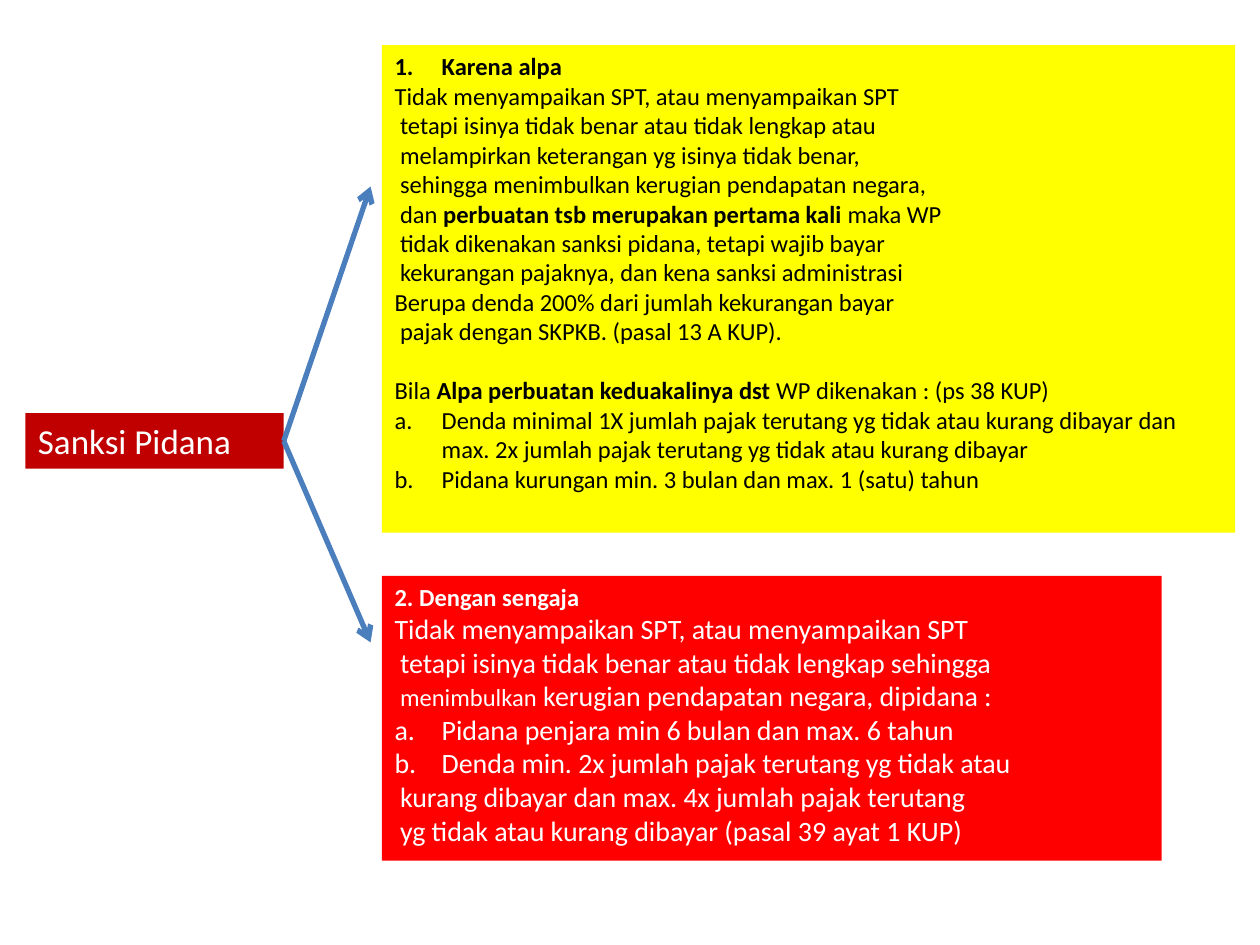
import pptx
import pptx.util
import pptx.dml.color
import pptx.enum.shapes
import pptx.enum.text
import pptx.oxml
import pptx.oxml.ns
from dataclasses import dataclass
from typing import NamedTuple, Optional

Cm, Pt = pptx.util.Cm, pptx.util.Pt
RGB = pptx.dml.color.RGBColor


@dataclass(frozen=True)
class Theme:
    font: str = "Calibri"
    maroon: str = "C00000"
    yellow: str = "FFFF00"
    red: str = "FF0000"
    arrow: str = "4B7EBC"
    black: str = "000000"
    white: str = "FFFFFF"
    title_size: int = 20
    large: int = 16
    small: int = 14


THEME = Theme()


class Run(NamedTuple):
    text: str
    bold: bool = False
    size: Optional[int] = None


class Line(NamedTuple):
    runs: tuple
    numbering: Optional[str] = None
    margin: float = 0
    before: float = 0


class Panel(NamedTuple):
    box: tuple
    fill: str
    color: str
    size: int
    lines: list


NUMBER_INDENT = 0.95
CONTINUATION_INDENT = 0.11


def plain(text: str, **options) -> Line:
    return Line((Run(text),), **options)


def continued(*runs: Run) -> Line:
    return Line(runs, margin=CONTINUATION_INDENT)


def item(text: str, numbering: str = "alphaLcPeriod", bold: bool = False) -> Line:
    return Line((Run(text, bold),), numbering, NUMBER_INDENT)


def format_paragraph(paragraph, line: Line) -> None:
    properties = paragraph._p.get_or_add_pPr()
    properties.set("marL", str(Cm(line.margin)))
    properties.set("indent", str(-Cm(line.margin) if line.numbering else 0))
    bullet = pptx.oxml.parse_xml(
        f'<a:{"buAutoNum" if line.numbering else "buNone"} {pptx.oxml.ns.nsdecls("a")}/>')
    if line.numbering:
        bullet.set("type", line.numbering)
    properties.append(bullet)
    layout = {"alignment": pptx.enum.text.PP_ALIGN.LEFT,
              "space_before": Pt(line.before), "space_after": Pt(0)}
    for name, value in layout.items():
        setattr(paragraph, name, value)


def fill_panel(placeholder, panel: Panel) -> None:
    for name, value in zip(("left", "top", "width", "height"), panel.box):
        setattr(placeholder, name, Cm(value))
    placeholder.fill.solid()
    placeholder.fill.fore_color.rgb = RGB.from_string(panel.fill)

    frame = placeholder.text_frame
    frame_format = {"word_wrap": True,
                    "auto_size": pptx.enum.text.MSO_AUTO_SIZE.NONE,
                    "vertical_anchor": pptx.enum.text.MSO_ANCHOR.TOP}
    for name, value in frame_format.items():
        setattr(frame, name, value)

    for index, line in enumerate(panel.lines):
        paragraph = frame.add_paragraph() if index else frame.paragraphs[0]
        format_paragraph(paragraph, line)
        for part in line.runs:
            run = paragraph.add_run()
            run.text = part.text
            run_format = {"name": THEME.font, "bold": part.bold,
                          "size": Pt(part.size or panel.size)}
            for name, value in run_format.items():
                setattr(run.font, name, value)
            run.font.color.rgb = RGB.from_string(panel.color)


def draw_arrow(slide, origin, end_x: float, end_y: float) -> None:
    arrow = slide.shapes.add_connector(
        pptx.enum.shapes.MSO_CONNECTOR.STRAIGHT, 0, 0, Cm(end_x), Cm(end_y))
    arrow.begin_connect(origin, 3)
    arrow.line.width = Pt(3)
    arrow.line.color.rgb = RGB.from_string(THEME.arrow)
    namespace = pptx.oxml.ns.nsdecls("a")
    arrow.line._get_or_add_ln().append(
        pptx.oxml.parse_xml(f'<a:tailEnd {namespace} type="arrow"/>'))
    arrow._element.spPr.append(pptx.oxml.parse_xml(f"<a:effectLst {namespace}/>"))


SANCTION = Panel((0.51, 8.33, 5.21, 1.12), THEME.maroon, THEME.white,
                 THEME.title_size, [plain("Sanksi Pidana")])

NEGLIGENCE = Panel((7.7, 0.91, 17.2, 9.83), THEME.yellow, THEME.black, THEME.small, [
    item("Karena alpa", "arabicPeriod", bold=True),
    plain("Tidak menyampaikan SPT, atau menyampaikan SPT"),
    continued(Run("tetapi isinya tidak benar atau tidak lengkap atau")),
    continued(Run("melampirkan keterangan yg isinya tidak benar,")),
    continued(Run("sehingga menimbulkan kerugian pendapatan negara,")),
    continued(Run("dan "), Run("perbuatan tsb merupakan pertama kali ", True),
              Run("maka WP")),
    continued(Run("tidak dikenakan sanksi pidana, tetapi wajib bayar")),
    continued(Run("kekurangan pajaknya, dan kena sanksi administrasi")),
    plain("Berupa denda 200% dari jumlah kekurangan bayar"),
    continued(Run("pajak dengan SKPKB. (pasal 13 A KUP).")),
    Line((Run("Bila "), Run("Alpa perbuatan keduakalinya dst ", True),
          Run("WP dikenakan : (ps 38 KUP)")), before=17),
    item("Denda minimal 1X jumlah pajak terutang yg tidak atau kurang dibayar dan "
         "max. 2x jumlah pajak terutang yg tidak atau kurang dibayar"),
    item("Pidana kurungan min. 3 bulan dan max. 1 (satu) tahun"),
])

INTENT = Panel((7.7, 11.61, 15.72, 5.74), THEME.red, THEME.white, THEME.large, [
    Line((Run("2. Dengan sengaja", True, THEME.small),)),
    plain("Tidak menyampaikan SPT, atau menyampaikan SPT"),
    continued(Run("tetapi isinya tidak benar atau tidak lengkap sehingga")),
    continued(Run("menimbulkan", size=THEME.small),
              Run(" kerugian pendapatan negara, dipidana :")),
    item("Pidana penjara min 6 bulan dan max. 6 tahun"),
    item("Denda min. 2x jumlah pajak terutang yg tidak atau"),
    continued(Run("kurang dibayar dan max. 4x jumlah pajak terutang")),
    continued(Run("yg tidak atau kurang dibayar (pasal 39 ayat 1 KUP)")),
])


def main() -> None:
    deck = pptx.Presentation()
    deck.slide_width, deck.slide_height = Cm(25.4), Cm(19.05)
    slide = deck.slides.add_slide(deck.slide_layouts.get_by_name("Two Content"))

    # Title and the two kinds of offence
    sanction = slide.shapes.title
    for index, panel in enumerate((SANCTION, NEGLIGENCE, INTENT)):
        fill_panel(slide.placeholders[index], panel)

    # Branches from the title to each offence
    for end_y in (3.76, 12.95):
        draw_arrow(slide, sanction, 7.47, end_y)

    # Footer placeholders are not copied from the layout, so none remain empty
    deck.save("out.pptx")


if __name__ == "__main__":
    main()
